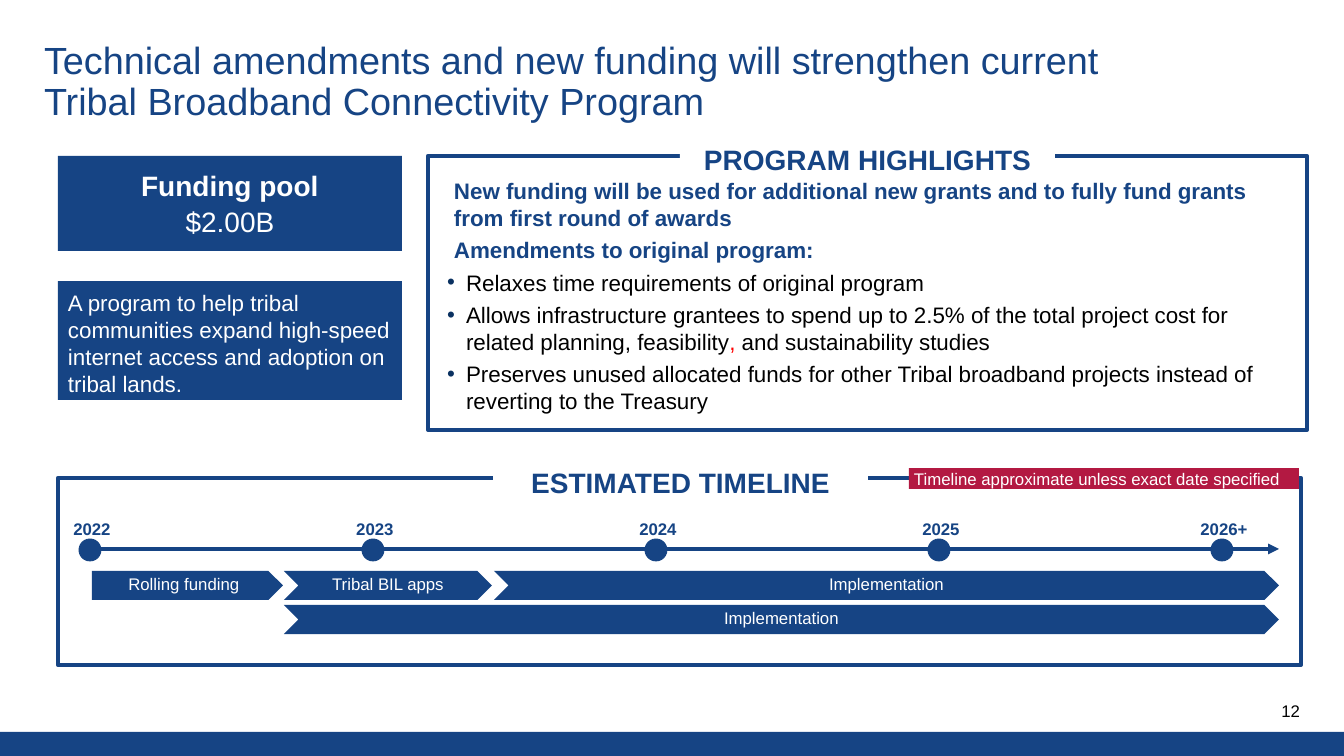
from lxml.etree import SubElement
from pptx import Presentation
from pptx.dml.color import RGBColor
from pptx.enum.shapes import MSO_CONNECTOR as LINK, MSO_SHAPE as KIND
from pptx.enum.text import MSO_ANCHOR as ANCHOR, PP_ALIGN as ALIGN
from pptx.oxml.ns import qn
from pptx.util import Emu, Pt

NAVY = RGBColor(0x16, 0x44, 0x84)
INK = RGBColor(0x0A, 0x31, 0x61)
CRIMSON = RGBColor(0xB3, 0x19, 0x42)
RED = RGBColor(0xFF, 0, 0)
WHITE = RGBColor(255, 255, 255)
BLACK = RGBColor(0, 0, 0)

LEAD = {"size": 16, "bold": True, "color": NAVY}
BODY = {"size": 16, "color": BLACK}
HEAD = {"size": 20, "bold": True, "color": NAVY}
SMALL = {"size": 12, "color": WHITE}
YEAR = {"size": 12, "bold": True, "color": NAVY}


def px(n):
    return Emu(round(n * 914400 / 100.8))


def place(item, box):
    for key, n in zip(("left", "top", "width", "height"), box):
        setattr(item, key, px(n))


def write(para, text, look, **form):
    for key, value in form.items():
        setattr(para, key, value)
    run = para.add_run()
    run.text = text
    font = run.font
    for key, value in {"name": "Arial", "bold": False, **look}.items():
        if key == "color":
            font.color.rgb = value
        else:
            setattr(font, key, Pt(value) if key == "size" else value)


def frame(item, pads=(10, 5, 10, 5), anchor=ANCHOR.TOP):
    text = item.text_frame
    text.word_wrap = True
    text.vertical_anchor = anchor
    for side, n in zip(("left", "top", "right", "bottom"), pads):
        setattr(text, "margin_" + side, px(n))
    return text


def block(slide, box, fill=NAVY, line=None, width=3, kind=KIND.RECTANGLE):
    item = slide.shapes.add_shape(kind, *map(px, box))
    item.shadow.inherit = False
    item.fill.solid()
    item.fill.fore_color.rgb = fill
    if line is None:
        item.line.fill.background()
    else:
        item.line.color.rgb = line
        item.line.width = Pt(width)
    return item


def title(slide, box):
    item = slide.shapes.title
    place(item, box)
    para = frame(item, (0, 0, 0, 0)).paragraphs[0]
    write(para, "Technical amendments and new funding will strengthen current "
          "Tribal Broadband Connectivity Program",
          {"size": 27, "color": NAVY}, alignment=ALIGN.LEFT, line_spacing=0.9)


def heading(slide, text, box):
    item = block(slide, box, WHITE)
    write(frame(item, (0, 3, 0, 0)).paragraphs[0], text, HEAD,
          alignment=ALIGN.CENTER)


def indent(para, left, hang=0):
    props = para._p.get_or_add_pPr()
    props.set("marL", str(px(left)))
    props.set("indent", str(px(-hang)))
    if hang:
        tint = SubElement(props, qn("a:buClr"))
        SubElement(tint, qn("a:srgbClr"), val=str(INK))
        SubElement(props, qn("a:buFont"), typeface="Arial")
        SubElement(props, qn("a:buChar"), char="•")


def summary(slide, box):
    x, y, w, h = box
    pool = frame(block(slide, (x, y, w, 95)), anchor=ANCHOR.MIDDLE)
    write(pool.paragraphs[0], "Funding pool", {**HEAD, "color": WHITE},
          alignment=ALIGN.CENTER)
    write(pool.add_paragraph(), "$2.00B", {"size": 20, "color": WHITE},
          alignment=ALIGN.CENTER, space_before=Pt(2))
    about = frame(block(slide, (x, y + 125, w, h - 125)), (10, 8, 10, 5))
    write(about.paragraphs[0], "A program to help tribal communities expand "
          "high-speed internet access and adoption on tribal lands.",
          {"size": 16, "color": WHITE}, alignment=ALIGN.LEFT)


def highlights(slide, box):
    x, y, w, h = box
    text = frame(block(slide, box, WHITE, NAVY), (10, 21, 10, 5))
    leads = ("New funding will be used for additional new grants and to fully "
             "fund grants from first round of awards",
             "Amendments to original program:")
    points = (
        [("Relaxes time requirements of original program", BLACK)],
        [("Allows infrastructure grantees to spend up to 2.5% of the total "
          "project cost for related planning, feasibility", BLACK),
         (",", RED), (" and sustainability studies", BLACK)],
        [("Preserves unused allocated funds for other Tribal broadband "
          "projects instead of reverting to the Treasury", BLACK)])
    form = {"alignment": ALIGN.LEFT, "space_after": Pt(4)}
    for i, lead in enumerate(leads):
        para = text.add_paragraph() if i else text.paragraphs[0]
        indent(para, 16)
        write(para, lead, LEAD, **form)
    for point in points:
        para = text.add_paragraph()
        indent(para, 28, 19)
        for words, tint in point:
            write(para, words, {**BODY, "color": tint}, **form)
    heading(slide, "PROGRAM HIGHLIGHTS", (x + 252, y - 17, 375, 34))


def axis(slide, box):
    x, y, w, h = box
    line = slide.shapes.add_connector(
        LINK.STRAIGHT, px(x), px(y), px(x + w), px(y))
    line.line.color.rgb = NAVY
    line.line.width = Pt(2.55)
    props = line._element.spPr
    SubElement(props.find(qn("a:ln")), qn("a:tailEnd"), type="triangle")
    SubElement(props, qn("a:effectLst"))
    for i, year in enumerate(("2022", "2023", "2024", "2025", "2026+")):
        mid = x - 2 + 283 * i
        block(slide, (mid - 11, y - 10, 22, 22), NAVY, NAVY, 0.64, KIND.OVAL)
        label = slide.shapes.add_textbox(*map(px, (mid - 53, y - 34, 110, 29)))
        write(frame(label, (9, 4, 9, 4)).paragraphs[0], year, YEAR,
              alignment=ALIGN.CENTER)


def phases(slide, box):
    x, y, w, h = box
    steps = (("Rolling funding", 0, 191, 0, KIND.PENTAGON),
             ("Tribal BIL apps", 192, 400, 0, KIND.CHEVRON),
             ("Implementation", 402, w, 0, KIND.CHEVRON),
             ("Implementation", 192, w, 1, KIND.CHEVRON))
    for text, start, end, row, kind in steps:
        item = block(slide, (x + start, y + 34 * row, end - start, 29),
                     kind=kind)
        write(frame(item, (5, 3, 5, 3), ANCHOR.MIDDLE).paragraphs[0], text,
              SMALL, alignment=ALIGN.CENTER, line_spacing=0.9,
              space_after=Pt(6.4))


def timeline(slide, box):
    x, y, w, h = box
    block(slide, box, WHITE, NAVY)
    heading(slide, "ESTIMATED TIMELINE", (x + 435, y - 16, 375, 34))
    note = block(slide, (x + 851, y - 10, 390, 21), CRIMSON)
    write(frame(note, (5, 5, 5, 5), ANCHOR.MIDDLE).paragraphs[0],
          "Timeline approximate unless exact date specified", SMALL,
          alignment=ALIGN.LEFT)
    axis(slide, (x + 34, y + 71, 1187, 0))
    phases(slide, (x + 34, y + 93, 1187, 63))


def footer(slide, box):
    x, y, w, h = box
    block(slide, box)
    page = slide.shapes.add_textbox(*map(px, (x + w - 117, y - 30, 73, 18)))
    write(frame(page, (0, 0, 0, 0), ANCHOR.MIDDLE).paragraphs[0], "12",
          {**SMALL, "color": BLACK}, alignment=ALIGN.RIGHT)


def main():
    deck = Presentation()
    deck.slide_width, deck.slide_height = px(1344), px(756)
    slide = deck.slides.add_slide(deck.slide_layouts[5])
    footer(slide, (0, 732, 1344, 24))
    title(slide, (44, 42, 1100, 62))
    highlights(slide, (428, 156, 879, 274))
    summary(slide, (58, 156, 344, 244))
    timeline(slide, (58, 478, 1243, 187))
    deck.save("out.pptx")


if __name__ == "__main__":
    main()
